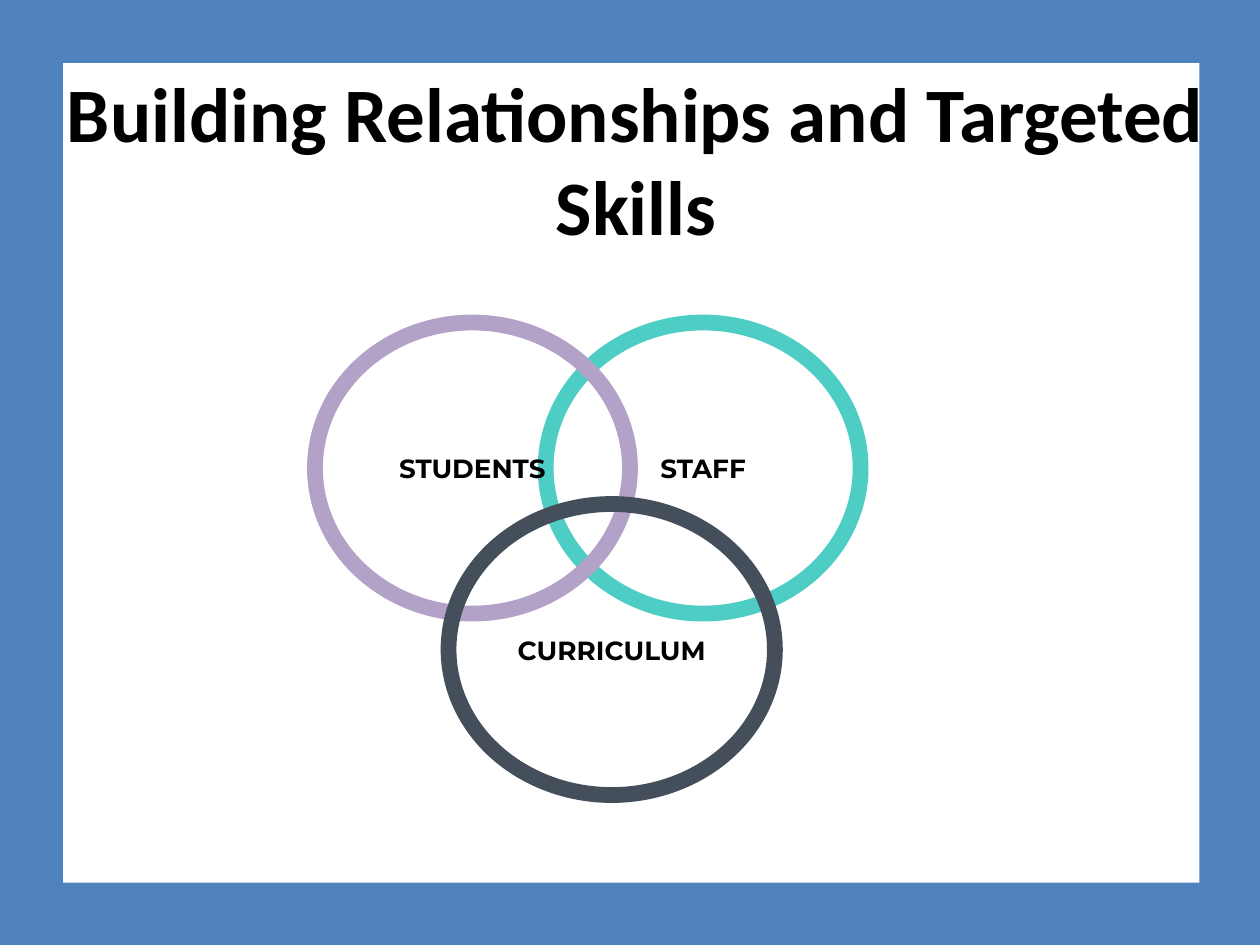
from pptx import Presentation
from pptx.dml.color import RGBColor
from pptx.enum.shapes import MSO_SHAPE
from pptx.enum.text import MSO_ANCHOR, PP_ALIGN
from pptx.util import Pt

RECTANGLE, OVAL = MSO_SHAPE.RECTANGLE, MSO_SHAPE.OVAL
CENTER = PP_ALIGN.CENTER
MIDDLE, BOTTOM = MSO_ANCHOR.MIDDLE, MSO_ANCHOR.BOTTOM

# Content
TITLE = "Building Relationships and Targeted Skills"
# label, ring colour, left, top, width (back to front)
RINGS = [
    ("STAFF", "staff", 311.8, 184.3, 180),
    ("STUDENTS", "students", 180, 184.3, 180),
    ("CURRICULUM", "curriculum", 256.3, 288, 186.5),
]

THEME = {
    "text": "000000",
    "frame": "4F81BD",
    "staff": "4ECDC4",
    "students": "B3A2C7",
    "curriculum": "454F5B",
    "title_font": ("Calibri", 44),
    "label_font": ("Montserrat", 15),
}

# Measures in points
PAGE_W, PAGE_H = 720, 540
BAR = 36
RIGHT_BAR, BOTTOM_BAR = 685.4, 504.4
RING_H, RING_LINE = 166.3, 9
INSET = 5.04
TITLE_BOX = (26.6, 30.3, 673.9, 118)


def color(name):
    return RGBColor.from_string(THEME[name])


def write(shape, text, font, anchor):
    frame = shape.text_frame
    frame.word_wrap = True
    frame.vertical_anchor = anchor
    frame.margin_left = frame.margin_right = Pt(INSET)
    frame.margin_top = frame.margin_bottom = Pt(INSET)
    para = frame.paragraphs[0]
    para.text = text
    para.alignment = CENTER
    name, size = THEME[font]
    para.font.name = name
    para.font.size = Pt(size)
    para.font.bold = True
    para.font.color.rgb = color("text")


def add_shape(page, kind, *box):
    shape = page.shapes.add_shape(kind, *map(Pt, box))
    shape.shadow.inherit = False
    return shape


def main():
    deck = Presentation()
    deck.slide_width, deck.slide_height = Pt(PAGE_W), Pt(PAGE_H)
    page = deck.slides.add_slide(deck.slide_layouts[6])

    # Frame around the page
    for box in [
        (0, 0, BAR, PAGE_H),
        (0, BOTTOM_BAR, PAGE_W, PAGE_H - BOTTOM_BAR),
        (RIGHT_BAR, 0, PAGE_W - RIGHT_BAR, PAGE_H),
        (0, 0, PAGE_W, BAR),
    ]:
        bar = add_shape(page, RECTANGLE, *box)
        bar.fill.solid()
        bar.fill.fore_color.rgb = color("frame")
        bar.line.fill.background()

    # Title
    title = page.shapes.add_textbox(*map(Pt, TITLE_BOX))
    write(title, TITLE, "title_font", BOTTOM)

    # Overlapping rings
    for label, ring_color, left, top, width in RINGS:
        ring = add_shape(page, OVAL, left, top, width, RING_H)
        ring.fill.background()
        ring.line.color.rgb = color(ring_color)
        ring.line.width = Pt(RING_LINE)
        write(ring, label, "label_font", MIDDLE)

    deck.save("out.pptx")


if __name__ == "__main__":
    main()
